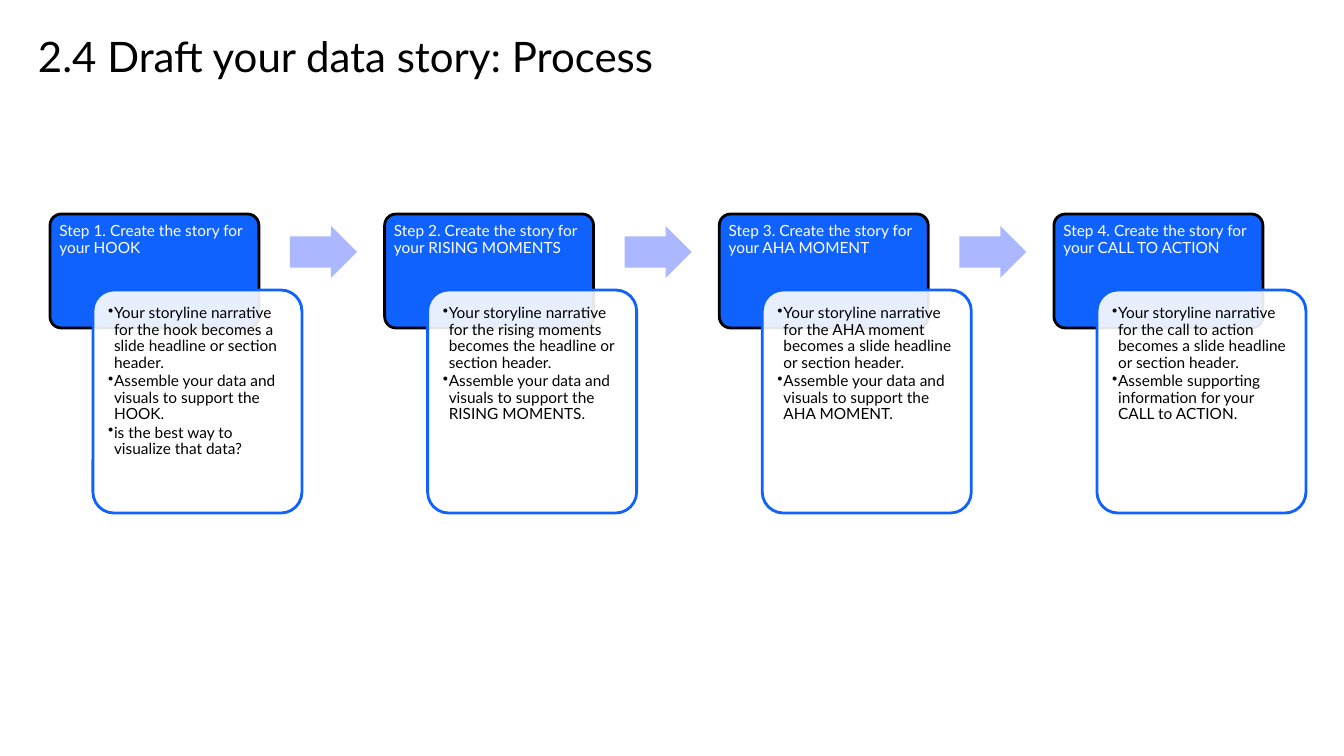
import pptx
import pptx.util
import pptx.dml.color
import pptx.enum.shapes
import pptx.enum.text
import lxml.etree

TITLE = "2.4 Draft your data story: Process"
STEPS = [
    ("Step 1. Create the story for your HOOK", [
        "Your storyline narrative for the hook becomes a slide headline or section header.",
        "Assemble your data and visuals to support the HOOK.",
        "is the best way to visualize that data?",
    ]),
    ("Step 2. Create the story for your RISING MOMENTS", [
        "Your storyline narrative for the rising moments becomes the headline or section header.",
        "Assemble your data and visuals to support the RISING MOMENTS.",
    ]),
    ("Step 3. Create the story for your AHA MOMENT", [
        "Your storyline narrative for the AHA moment becomes a slide headline or section header.",
        "Assemble your data and visuals to support the AHA MOMENT.",
    ]),
    ("Step 4. Create the story for your CALL TO ACTION", [
        "Your storyline narrative for the call to action becomes a slide headline or section header.",
        "Assemble supporting information for your CALL to ACTION.",
    ]),
]
COLORS = {"blue": "0F62FE", "lavender": "ABB7FE", "white": "FFFFFF", "black": "000000"}
FONT = "Lato"

# Lengths in px
SLIDE_WIDTH, SLIDE_HEIGHT = 1344, 756
TITLE_BOX = (38, 31, 1118, 84)
FIRST_LEFT, LAST_LEFT = 50, 1054
HEADER_TOP, HEADER_HEIGHT = 214, 114
DETAIL_SHIFT, DETAIL_TOP, DETAIL_HEIGHT = 43, 290, 223
CARD_WIDTH = 209
ARROW_SHIFT, ARROW_TOP, ARROW_WIDTH, ARROW_HEIGHT = 240, 226, 67, 52
BULLET_INDENT = 6

SHAPES = pptx.enum.shapes.MSO_SHAPE


def px(length):
    return pptx.util.Emu(round(length * 914400 / 100.8))


def rgb(name):
    return pptx.dml.color.RGBColor.from_string(COLORS[name])


def add_block(slide, kind, box, fill, line=None, adjustments=(0.1,)):
    shape = slide.shapes.add_shape(kind, *map(px, box))
    shape.shadow.inherit = False
    for index, value in enumerate(adjustments):
        shape.adjustments[index] = value
    shape.fill.solid()
    shape.fill.fore_color.rgb = rgb(fill)
    if line:
        shape.line.color.rgb = rgb(line)
        shape.line.width = pptx.util.Pt(2)
    else:
        shape.line.fill.background()
    return shape


def write(shape, text, size, color, insets=(0, 0, 0, 0)):
    """Fill the shape with top-left text; insets run left, top, right, bottom."""
    frame = shape.text_frame
    frame.word_wrap = True
    frame.vertical_anchor = pptx.enum.text.MSO_ANCHOR.TOP
    (frame.margin_left, frame.margin_top,
     frame.margin_right, frame.margin_bottom) = map(px, insets)
    frame.text = text
    for paragraph in frame.paragraphs:
        paragraph.alignment = pptx.enum.text.PP_ALIGN.LEFT
        for run in paragraph.runs:
            run.font.name = FONT
            run.font.size = pptx.util.Pt(size)
            run.font.color.rgb = rgb(color)
    return frame.paragraphs


def add_bullet(paragraph):
    properties = paragraph._p.get_or_add_pPr()
    properties.set("marL", str(px(BULLET_INDENT)))
    properties.set("indent", str(-px(BULLET_INDENT)))
    bullet = lxml.etree.SubElement(properties, pptx.oxml.ns.qn("a:buChar"))
    bullet.set("char", "•")


def set_opacity(shape, percent):
    color = shape.fill._xPr.find(".//" + pptx.oxml.ns.qn("a:srgbClr"))
    alpha = lxml.etree.SubElement(color, pptx.oxml.ns.qn("a:alpha"))
    alpha.set("val", str(percent * 1000))


def add_step(slide, left, heading, details):
    header = add_block(slide, SHAPES.ROUNDED_RECTANGLE,
                       (left, HEADER_TOP, CARD_WIDTH, HEADER_HEIGHT), "blue", "black")
    for paragraph in write(header, heading, 11, "white", (6, 6, 6, 5)):
        paragraph.line_spacing = 0.9

    card = add_block(slide, SHAPES.ROUNDED_RECTANGLE,
                     (left + DETAIL_SHIFT, DETAIL_TOP, CARD_WIDTH, DETAIL_HEIGHT),
                     "white", "blue")
    set_opacity(card, 90)
    for paragraph in write(card, "\n".join(details), 11, "black", (9, 9, 9, 9)):
        add_bullet(paragraph)
        paragraph.line_spacing = 0.9
        paragraph.space_after = pptx.util.Pt(1.2)


def main():
    presentation = pptx.Presentation()
    presentation.slide_width = px(SLIDE_WIDTH)
    presentation.slide_height = px(SLIDE_HEIGHT)
    slide = presentation.slides.add_slide(presentation.slide_layouts[6])

    write(slide.shapes.add_textbox(*map(px, TITLE_BOX)), TITLE, 30, "black")

    last = len(STEPS) - 1
    pitch = (LAST_LEFT - FIRST_LEFT) / last
    for index, (heading, details) in enumerate(STEPS):
        left = FIRST_LEFT + index * pitch
        add_step(slide, left, heading, details)
        if index < last:
            add_block(slide, SHAPES.RIGHT_ARROW,
                      (left + ARROW_SHIFT, ARROW_TOP, ARROW_WIDTH, ARROW_HEIGHT),
                      "lavender", adjustments=(0.6, 0.5))

    presentation.save("out.pptx")


if __name__ == "__main__":
    main()
